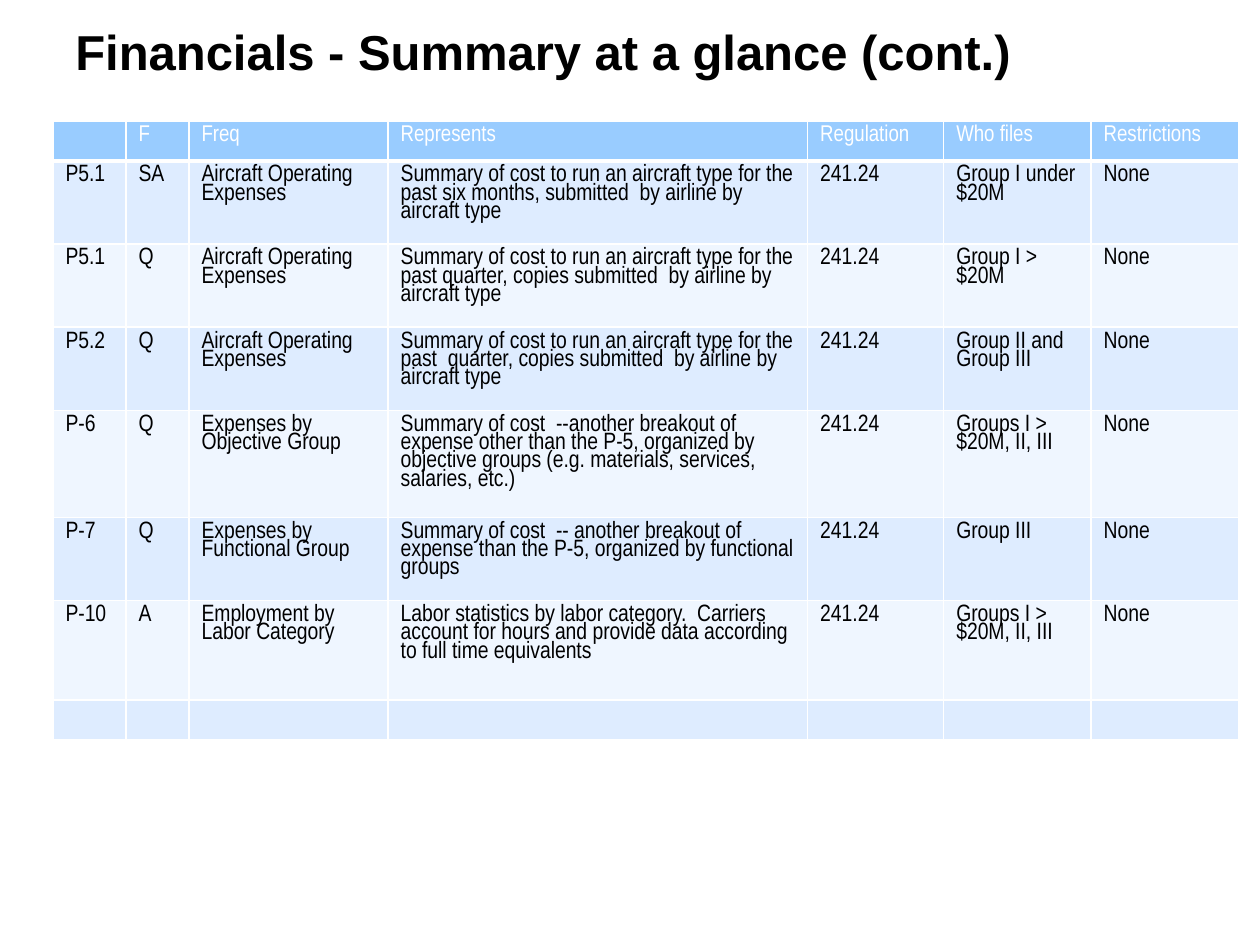
import pptx
import pptx.util
import pptx.dml.color
import pptx.enum.text
import pptx.oxml.ns
import lxml.etree

THEME = {
    "title_font": "Arial", "title_size": 28,
    "table_font": "Arial Narrow", "head_size": 13, "body_size": 13.5,
    "ink": "000000", "paper": "FFFFFF",
    "head": "99CCFF", "bands": ("DEECFF", "EFF6FF"),
    "line_spacing": 0.82,
}
inch = pptx.util.Inches
rgb = pptx.dml.color.RGBColor.from_string


def style(p, font, size, color, bold=False):
    p.font.name = font
    p.font.size = pptx.util.Pt(size)
    p.font.color.rgb = rgb(color)
    p.font.bold = bold


def add_borders(cell, widths):
    """Draw solid borders; widths maps L, R, T, B to points, in that order."""
    tc_pr = cell._tc.get_or_add_tcPr()
    qn = pptx.oxml.ns.qn
    for i, (side, width) in enumerate(widths.items()):
        ln = lxml.etree.Element(qn(f"a:ln{side}"), w=str(pptx.util.Pt(width)))
        fill = lxml.etree.SubElement(ln, qn("a:solidFill"))
        lxml.etree.SubElement(fill, qn("a:srgbClr"), val=THEME["paper"])
        tc_pr.insert(i, ln)


prs = pptx.Presentation()
prs.slide_width, prs.slide_height = inch(10), inch(7.5)
s = prs.slides.add_slide(prs.slide_layouts[6])

title = s.shapes.add_textbox(inch(0.5), inch(0.08), inch(9), inch(0.65))
tf = title.text_frame
tf.word_wrap = True
tf.vertical_anchor = pptx.enum.text.MSO_ANCHOR.MIDDLE
p = tf.paragraphs[0]
p.text = "Financials - Summary at a glance (cont.)"
style(p, THEME["title_font"], THEME["title_size"], THEME["ink"], bold=True)

columns = [0.58, 0.5, 1.58, 3.33, 1.08, 1.17, 1.17]
rows = [0.27, 0.66, 0.66, 0.66, 0.85, 0.66, 0.79, 0.27]
aircraft = "Aircraft Operating Expenses"
run_cost = "Summary of cost to run an aircraft type for the past"
reports = [
    ("P5.1", "SA", aircraft,
     f"{run_cost} six months, submitted  by airline by aircraft type",
     "Group I under $20M"),
    ("P5.1", "Q", aircraft,
     f"{run_cost} quarter, copies submitted  by airline by aircraft type",
     "Group I > $20M"),
    ("P5.2", "Q", aircraft,
     f"{run_cost}  quarter, copies submitted  by airline by aircraft type",
     "Group II and Group III"),
    ("P-6", "Q", "Expenses by Objective Group",
     "Summary of cost  --another breakout of expense other than the P-5, "
     "organized by objective groups (e.g. materials, services, salaries, etc.)",
     "Groups I > $20M, II, III"),
    ("P-7", "Q", "Expenses by Functional Group",
     "Summary of cost  -- another breakout of expense than the P-5, "
     "organized by functional groups",
     "Group III"),
    ("P-10", "A", "Employment by Labor Category",
     "Labor statistics by labor category.  Carriers account for hours and "
     "provide data according to full time equivalents",
     "Groups I > $20M, II, III"),
]
header = ("", "F", "Freq", "Represents", "Regulation", "Who files", "Restrictions")
body = [(*report[:4], "241.24", report[4], "None") for report in reports]
grid = [header, *body, ("",) * len(columns)]

table = s.shapes.add_table(len(rows), len(columns), inch(0.42), inch(0.96),
                           inch(sum(columns)), inch(sum(rows))).table
for column, width in zip(table.columns, columns):
    column.width = inch(width)
for row, height in zip(table.rows, rows):
    row.height = inch(height)

for i, texts in enumerate(grid):
    is_head = i == 0
    fill = THEME["head"] if is_head else THEME["bands"][(i - 1) % 2]
    size = THEME["head_size"] if is_head else THEME["body_size"]
    color = THEME["paper"] if is_head else THEME["ink"]
    for j, text in enumerate(texts):
        cell = table.cell(i, j)
        cell.fill.solid()
        cell.fill.fore_color.rgb = rgb(fill)
        add_borders(cell, {"L": 1, "R": 1, "T": 1, "B": 3 if is_head else 1})
        p = cell.text_frame.paragraphs[0]
        p.text = text
        p.line_spacing = THEME["line_spacing"]
        style(p, THEME["table_font"], size, color)
        if not text:  # an empty cell takes its height from the end mark
            end = p._p.get_or_add_endParaRPr()
            end.set("sz", str(THEME["head_size"] * 100))

prs.save("out.pptx")
